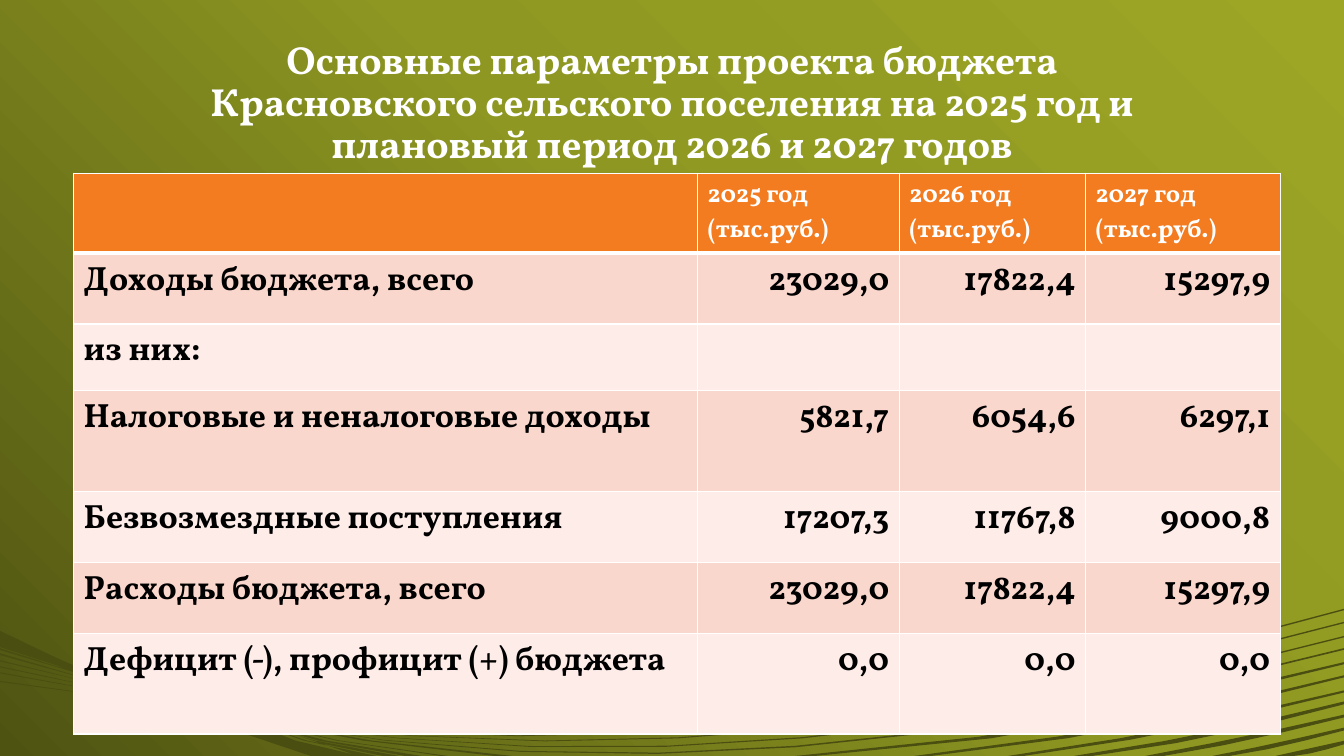
"""Build the budget parameters slide with its table and wave backdrop."""
from copy import deepcopy

from lxml import etree
from pptx import Presentation
from pptx.dml.color import RGBColor
from pptx.enum.text import MSO_ANCHOR, PP_ALIGN
from pptx.oxml.ns import qn
from pptx.util import Pt

FONT = "Vollkorn"
WIDTH, HEIGHT = 960, 540
TITLE = ("Основные параметры проекта бюджета Красновского сельского поселения "
         "на 2025 год и плановый период 2026 и 2027 годов")
ROWS = [
    ("", "2025 год (тыс.руб.)", "2026 год (тыс.руб.)", "2027 год (тыс.руб.)"),
    ("Доходы бюджета, всего", "23029,0", "17822,4", "15297,9"),
    ("из них:", "", "", ""),
    ("Налоговые и неналоговые доходы", "5821,7", "6054,6", "6297,1"),
    ("Безвозмездные поступления", "17207,3", "11767,8", "9000,8"),
    ("Расходы бюджета, всего", "23029,0", "17822,4", "15297,9"),
    ("Дефицит (-), профицит (+) бюджета", "0,0", "0,0", "0,0"),
]
COLUMN_WIDTHS = (445.7, 144, 133.2, 139)
ROW_HEIGHTS = (57, 50.7, 47.5, 72, 50.7, 50.7, 72)
WHITE, BLACK, WAVE, HEADER = "FFFFFF", "000000", "4A4E11", "F37B20"
BANDS = ("FDECE8", "FAD7CD")
BACKGROUND = [(0, "9DA625"), (45, "8E9721"), (100, "4E5312")]

# left x, four heights from left to right, thickness, gap at the left end
STRANDS = [
    (911, (540, 536.4, 532.8, 529.2), 2.5, 13),
    (866, (540, 534.2, 527, 519.8), 2, 12),
    (818, (540, 531.4, 521.3, 510.5), 2, 13),
    (767, (540, 530.6, 517.7, 501.1), 2, 13),
    (720, (540, 529.2, 512.6, 493.2), 1.5, 11),
    (653, (540, 529.2, 509, 482.4), 1.5, 12),
    (568, (540, 531.4, 506.9, 473), 1.5, 14),
    (173, (511.9, 547.2, 509.8, 434.9), 1, 0),
    (199, (515.5, 550.8, 513.4, 444.2), 1, 0),
    (186, (514.1, 558, 523.4, 454.3), 1, 0),
    (176, (513.4, 563.8, 531.4, 463), 1.2, 0),
]
LEFT_RAYS = [
    (463, 464.4, 65, 483.8), (466.6, 468, 76, 488.9), (471.6, 472.4, 79, 491),
    (475.9, 476.7, 90, 495.4), (480.2, 481, 97, 498.2), (486.4, 487.2, 105, 501.1),
]
HUB = (165, 511)
BOTTOM_RAYS = [(353, 366), (315, 320), (289.5, 301), (273.5, 285), (257, 269)]
STEM = [(0, 450.7), (41, 470.2), (70.6, 483.1), (129.6, 502.6), (172.8, 511.9),
        (256, 540), (222, 540), (106, 501), (72, 487.4), (40, 475.2), (0, 462.2)]


def color(value):
    return RGBColor.from_string(value)


def curve(left, heights):
    steps = 8 if left < 200 else 3
    points = []
    for step in range(steps + 1):
        t = step / steps
        weights = ((1 - t) ** 3, 3 * t * (1 - t) ** 2, 3 * t * t * (1 - t), t ** 3)
        y = sum(weight * height for weight, height in zip(weights, heights))
        points.append((left + (WIDTH - left) * t, y))
    return points


def strand(left, heights, thickness, gap):
    lower = [heights[0]] + [height + thickness for height in heights[1:]]
    upper_edge = curve(left, heights)
    lower_edge = [(x + gap * (WIDTH - x) / (WIDTH - left), y) for x, y in curve(left, lower)]
    return upper_edge + lower_edge[::-1]


def bottom_ray(start, end):
    bends = [((HUB[0] + x) / 2, 529) for x in (start, end)]
    return [HUB, bends[1], (end, HEIGHT), (start, HEIGHT), bends[0]]


def paint_background(page):
    fill = page.background.fill
    fill.gradient()
    fill.gradient_angle = 225
    stop_list = page.background._cSld.find(".//" + qn("a:gsLst"))
    stop_list.insert(1, deepcopy(stop_list[0]))
    for stop, (position, value) in zip(fill.gradient_stops, BACKGROUND):
        stop.position = position / 100
        stop.color.rgb = color(value)


def draw_waves(page):
    outlines = [strand(*item) for item in STRANDS] + [STEM]
    outlines += [[(0, top), (x, y), (0, bottom)] for top, bottom, x, y in LEFT_RAYS]
    outlines += [bottom_ray(*ends) for ends in BOTTOM_RAYS]
    contours = [[(Pt(x), Pt(y)) for x, y in outline] for outline in outlines]
    builder = page.shapes.build_freeform(*contours[0][0])
    for number, contour in enumerate(contours):
        if number:
            builder.move_to(*contour[0])
        builder.add_line_segments(contour[1:], close=True)
    waves = builder.convert_to_shape()
    waves.shadow.inherit = False
    waves.fill.solid()
    waves.fill.fore_color.rgb = color(WAVE)
    waves.line.fill.background()


def write(para, text, size, value, align):
    para.alignment = align
    span = para.add_run()
    span.text = text
    span.font.name = FONT
    span.font.size = Pt(size)
    span.font.bold = True
    span.font.color.rgb = color(value)


def add_title(page):
    box = page.shapes.add_textbox(Pt(120), Pt(31.7), Pt(720), Pt(91.4))
    box.text_frame.word_wrap = True
    box.text_frame.vertical_anchor = MSO_ANCHOR.BOTTOM
    para = box.text_frame.paragraphs[0]
    para.line_spacing = 0.9
    write(para, TITLE, 28, WHITE, PP_ALIGN.CENTER)


def set_borders(cell, widths):
    properties = cell._tc.get_or_add_tcPr()
    for index, (side, width) in enumerate(zip("LRTB", widths)):
        line = etree.Element(qn("a:ln" + side), w=str(Pt(width)))
        fill = etree.SubElement(line, qn("a:solidFill"))
        etree.SubElement(fill, qn("a:srgbClr"), val=WHITE)
        properties.insert(index, line)


def add_budget_table(page):
    frame = page.shapes.add_table(len(ROWS), len(COLUMN_WIDTHS), Pt(52.6), Pt(123.8),
                                  Pt(sum(COLUMN_WIDTHS)), Pt(sum(ROW_HEIGHTS)))
    table = frame.table
    for column, width in zip(table.columns, COLUMN_WIDTHS):
        column.width = Pt(width)
    for row, height in zip(table.rows, ROW_HEIGHTS):
        row.height = Pt(height)
    for r, texts in enumerate(ROWS):
        for c, text in enumerate(texts):
            cell = table.cell(r, c)
            cell.fill.solid()
            cell.fill.fore_color.rgb = color(BANDS[r % 2] if r else HEADER)
            set_borders(cell, (1, 1, 3 if r == 1 else 1, 1 if r else 3))
            if text:
                size, value = (24, BLACK) if r else (18, WHITE)
                align = PP_ALIGN.RIGHT if r and c else PP_ALIGN.LEFT
                write(cell.text_frame.paragraphs[0], text, size, value, align)


def main():
    deck = Presentation()
    deck.slide_width, deck.slide_height = Pt(WIDTH), Pt(HEIGHT)
    page = deck.slides.add_slide(deck.slide_layouts[6])
    paint_background(page)
    draw_waves(page)
    add_title(page)
    add_budget_table(page)
    deck.save("out.pptx")


if __name__ == "__main__":
    main()
